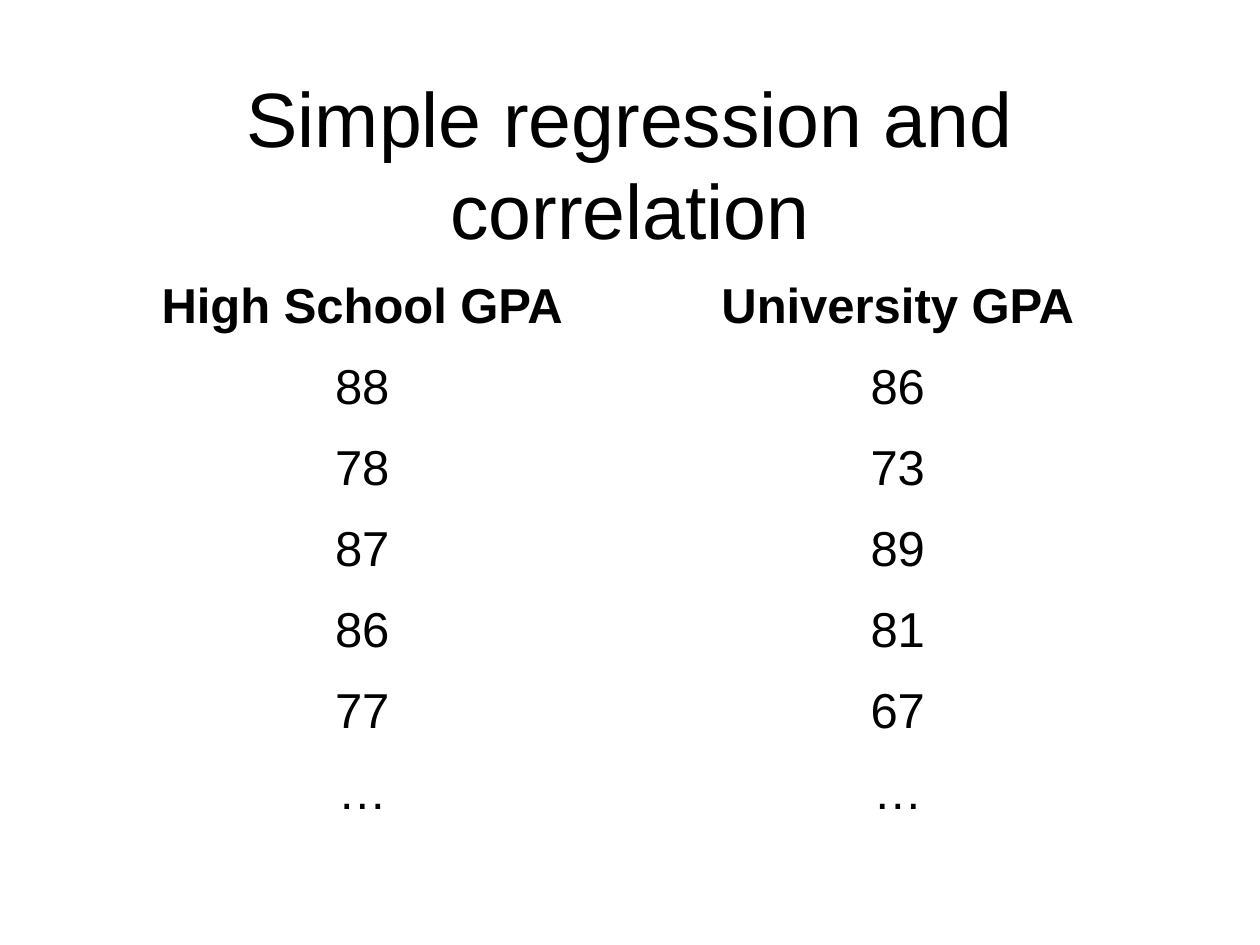
from pptx import Presentation
from pptx.dml.color import RGBColor
from pptx.enum.text import MSO_ANCHOR, PP_ALIGN
from pptx.util import Pt

CENTER = PP_ALIGN.CENTER
MIDDLE = MSO_ANCHOR.MIDDLE
TOP = MSO_ANCHOR.TOP
TITLE_ONLY = 5
COLORS = {"text": "000000"}
FONT = "Arial"
LEFT, WIDTH = 54, 612

GPA_ROWS = [
    ("High School GPA", "University GPA"),
    ("88", "86"),
    ("78", "73"),
    ("87", "89"),
    ("86", "81"),
    ("77", "67"),
    ("…", "…"),
]


def format_text(frame, size, bold=False):
    """Centre the single paragraph and style its run."""
    paragraph = frame.paragraphs[0]
    paragraph.alignment = CENTER
    font = paragraph.runs[0].font
    font.name = FONT
    font.size = Pt(size)
    font.bold = bold
    font.color.rgb = RGBColor.from_string(COLORS["text"])


prs = Presentation()
prs.slide_width, prs.slide_height = Pt(720), Pt(540)
slide = prs.slides.add_slide(prs.slide_layouts[TITLE_ONLY])

title = slide.shapes.title
title.left, title.top = Pt(LEFT), Pt(48)
title.width, title.height = Pt(WIDTH), Pt(90)
title.text_frame.text = "Simple regression and correlation"
title.text_frame.vertical_anchor = MIDDLE
format_text(title.text_frame, 44)

gpa_table = slide.shapes.add_table(
    len(GPA_ROWS), 2, Pt(LEFT), Pt(156), Pt(WIDTH), Pt(324)
).table
gpa_table.first_row = False
gpa_table.horz_banding = False

for row, scores in enumerate(GPA_ROWS):
    for column, score in enumerate(scores):
        cell = gpa_table.cell(row, column)
        cell.fill.background()
        cell.vertical_anchor = TOP
        cell.text_frame.text = score
        format_text(cell.text_frame, 28, bold=row == 0)

prs.save("out.pptx")
